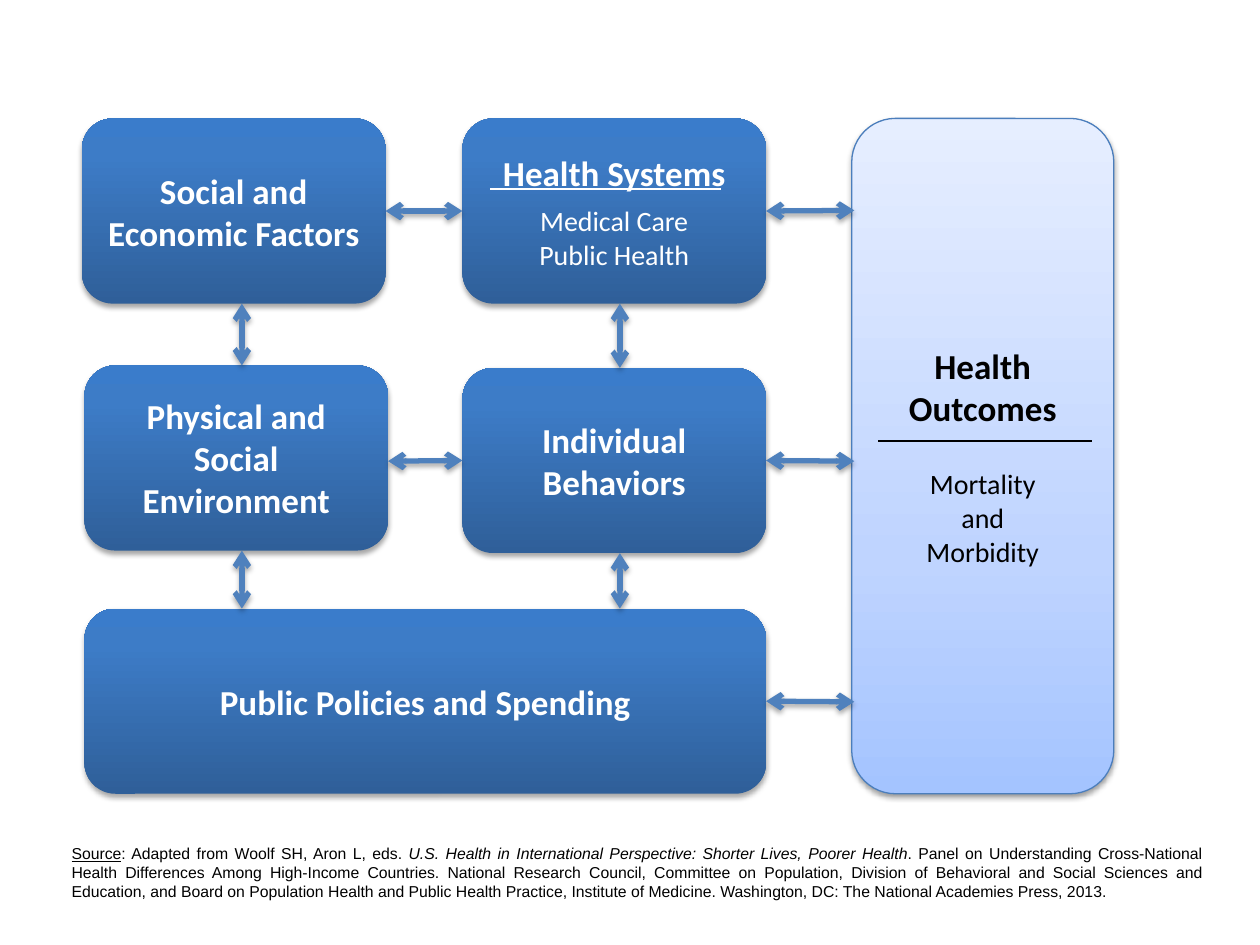
from pptx import Presentation
from pptx.dml.color import RGBColor
from pptx.enum.shapes import MSO_CONNECTOR, MSO_SHAPE
from pptx.enum.text import MSO_ANCHOR, PP_ALIGN
from pptx.oxml import parse_xml
from pptx.oxml.ns import nsdecls, qn
from pptx.util import Inches, Pt

ROUNDED = MSO_SHAPE.ROUNDED_RECTANGLE
STRAIGHT = MSO_CONNECTOR.STRAIGHT
MIDDLE = MSO_ANCHOR.MIDDLE
CENTER, JUSTIFY = PP_ALIGN.CENTER, PP_ALIGN.JUSTIFY
TOP, LEFT, BOTTOM, RIGHT = range(4)

WHITE = RGBColor(0xFF, 0xFF, 0xFF)
BLACK = RGBColor(0, 0, 0)
ARROW_BLUE = RGBColor(0x4F, 0x81, 0xBD)
EDGE_BLUE = RGBColor(0x4B, 0x7E, 0xBC)
# Gradient stops from bottom to top: percent, colour
DARK_STOPS = [(0, RGBColor(0x2F, 0x5F, 0x99)), (80, RGBColor(0x3D, 0x7C, 0xC7)),
              (100, RGBColor(0x3A, 0x7C, 0xCB))]
LIGHT_STOPS = [(0, RGBColor(0xA4, 0xC4, 0xFF)), (35, RGBColor(0xBF, 0xD4, 0xFF)),
               (100, RGBColor(0xE6, 0xEE, 0xFF))]
# Shadow: opacity percent, distance in points
DARK_SHADOW, LIGHT_SHADOW = (35, 1.8), (38, 1.6)

BOX_W, BOX_H = 2.41, 1.47
COL_2, EDGE = 3.67, 6.08
ROW_1, ROW_2, ROW_3 = 0.94, 2.92, 4.83
OUTCOMES_X = 6.78

# name: (left, top, width, height, heading, detail lines, gap in points)
FACTORS = {
    "social": (0.65, ROW_1, BOX_W, BOX_H, "Social and Economic Factors", [], 0),
    "systems": (COL_2, ROW_1, BOX_W, BOX_H, "Health Systems",
                ["Medical Care", "Public Health"], 6),
    "physical": (0.67, 2.9, BOX_W, BOX_H, "Physical and Social Environment", [], 0),
    "behaviors": (COL_2, ROW_2, BOX_W, BOX_H, "Individual Behaviors", [], 0),
    "policies": (0.67, ROW_3, EDGE - 0.67, BOX_H, "Public Policies and Spending", [], 0),
}
OUTCOMES = (6.76, ROW_1, 2.08, 5.36, "Health Outcomes",
            ["Mortality", "and", "Morbidity"], 22)

# (x1, y1, x2, y2, joined start, joined end)
ARROWS = [
    (3.06, 1.67, COL_2, 1.67, ("social", RIGHT), ("systems", LEFT)),
    (EDGE, 1.67, OUTCOMES_X, 1.67, ("systems", RIGHT), None),
    (3.08, 3.66, COL_2, 3.66, None, ("behaviors", LEFT)),
    (EDGE, 3.66, OUTCOMES_X, 3.66, ("behaviors", RIGHT), None),
    (EDGE, 5.57, OUTCOMES_X, 5.57, ("policies", RIGHT), None),
    (1.92, 2.9, 1.92, 2.41, None, None),
    (1.92, 4.83, 1.92, 4.37, None, None),
    (4.92, 2.92, 4.92, 2.41, None, None),
    (4.92, 4.83, 4.92, 4.39, None, None),
]
# Rules under headings: x1, x2, y, colour
RULES = [(3.89, 5.72, 1.5, WHITE), (6.97, 8.67, 3.5, BLACK)]

# (text, underline, italic)
SOURCE = [
    ("Source", True, False),
    (": Adapted from Woolf SH, Aron L, eds. ", False, False),
    ("U.S. Health in International Perspective: Shorter Lives, Poorer Health", False, True),
    (". Panel on Understanding Cross-National Health Differences Among High-Income "
     "Countries. National Research Council, Committee on Population, Division of "
     "Behavioral and Social Sciences and Education, and Board on Population Health and "
     "Public Health Practice, Institute of Medicine. Washington, DC: The National "
     "Academies Press, 2013.", False, False),
]


def set_effects(shape, shadow=None):
    """Replace the theme effects with one downward shadow, or with none."""
    sp_pr = shape._element.spPr
    for old in sp_pr.findall(qn("a:effectLst")):
        sp_pr.remove(old)
    inner = ""
    if shadow:
        opacity, distance = shadow
        inner = (f'<a:outerShdw blurRad="{Pt(3.1)}" dist="{Pt(distance)}" dir="5400000" '
                 f'rotWithShape="0"><a:srgbClr val="000000"><a:alpha val="{opacity * 1000}"/>'
                 '</a:srgbClr></a:outerShdw>')
    sp_pr.append(parse_xml(f'<a:effectLst {nsdecls("a")}>{inner}</a:effectLst>'))


def set_gradient(shape, stops):
    shape.fill.gradient()
    shape.fill.gradient_angle = 90
    gs_lst = shape._element.spPr.find(qn("a:gradFill")).find(qn("a:gsLst"))
    for old in list(gs_lst):
        gs_lst.remove(old)
    for percent, color in stops:
        gs_lst.append(parse_xml(f'<a:gs {nsdecls("a")} pos="{percent * 1000}">'
                                f'<a:srgbClr val="{color}"/></a:gs>'))


def add_run(p, text, font, size, color):
    r = p.add_run()
    r.text = text
    r.font.name, r.font.size = font, Pt(size)
    r.font.color.rgb = color
    return r


def add_box(s, box, stops, shadow, color, edge=None):
    *place, heading, details, gap = box
    sp = s.shapes.add_shape(ROUNDED, *map(Inches, place))
    set_gradient(sp, stops)
    if edge:
        sp.line.color.rgb = edge
        sp.line.width = Pt(0.75)
    else:
        sp.line.fill.background()
    set_effects(sp, shadow)
    tf = sp.text_frame
    tf.word_wrap = True
    tf.vertical_anchor = MIDDLE
    for i, text in enumerate([heading] + details):
        p = tf.paragraphs[0] if i == 0 else tf.add_paragraph()
        p.alignment = CENTER
        if i == 1:
            p.space_before = Pt(gap)
        r = add_run(p, text, "Calibri", 16 if i else 20, color)
        r.font.bold = i == 0
    return sp


def add_line(s, x1, y1, x2, y2, color, width):
    line = s.shapes.add_connector(STRAIGHT, *map(Inches, (x1, y1, x2, y2)))
    line.line.color.rgb = color
    line.line.width = Pt(width)
    set_effects(line)
    return line


prs = Presentation()
prs.slide_width, prs.slide_height = Inches(10), Inches(7.5)
s = prs.slides.add_slide(prs.slide_layouts[6])

boxes = {name: add_box(s, box, DARK_STOPS, DARK_SHADOW, WHITE)
         for name, box in FACTORS.items()}
add_box(s, OUTCOMES, LIGHT_STOPS, LIGHT_SHADOW, BLACK, EDGE_BLUE)

for *ends, start, end in ARROWS:
    arrow = add_line(s, *ends, ARROW_BLUE, 3)
    set_effects(arrow, DARK_SHADOW)
    for tag in ("headEnd", "tailEnd"):
        arrow.line._ln.append(parse_xml(f'<a:{tag} {nsdecls("a")} type="arrow"/>'))
    if start:
        arrow.begin_connect(boxes[start[0]], start[1])
    if end:
        arrow.end_connect(boxes[end[0]], end[1])

for x1, x2, y, color in RULES:
    add_line(s, x1, y, x2, y, color, 1.5)

tf = s.shapes.add_textbox(*map(Inches, (0.47, 6.65, 9.17, 0.56))).text_frame
tf.word_wrap = True
p = tf.paragraphs[0]
p.alignment = JUSTIFY
for text, underline, italic in SOURCE:
    r = add_run(p, text, "Arial", 9, BLACK)
    r.font.underline, r.font.italic = underline, italic

prs.save("out.pptx")
